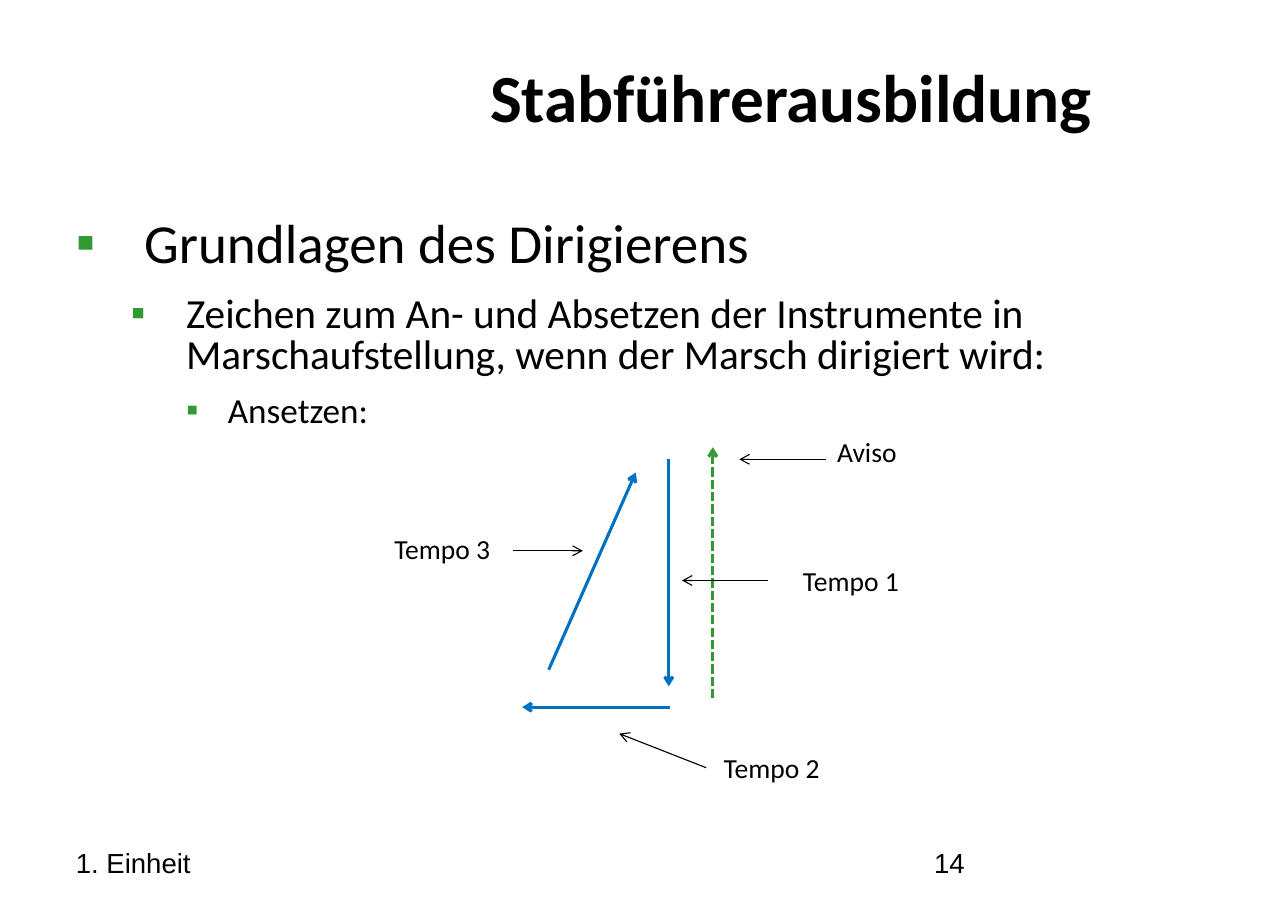
from lxml import etree
from pptx import Presentation
from pptx.dml.color import RGBColor
from pptx.enum.dml import MSO_LINE
from pptx.enum.shapes import MSO_CONNECTOR
from pptx.enum.text import MSO_ANCHOR, PP_ALIGN
from pptx.oxml.ns import qn
from pptx.util import Pt

PX = 9144
TOP = MSO_ANCHOR.TOP
LEFT = PP_ALIGN.LEFT
CENTER = PP_ALIGN.CENTER
LINE = MSO_CONNECTOR.STRAIGHT
DASH = MSO_LINE.SQUARE_DOT
BLACK = "000000"
GREEN = "339933"
BLUE = "0070C0"

POINTS = [
    ("Grundlagen des Dirigierens", 36, 62, 62, 14.2),
    ("Zeichen zum An- und Absetzen der Instrumente in "
     "Marschaufstellung, wenn der Marsch dirigiert wird:", 27, 100, 50, 11.4),
    ("Ansetzen:", 23, 138, 38, 8.5),
]
BEATS = [
    ((474, 642), (608, 642)),
    ((577, 429), (498, 608)),
    ((607, 623), (607, 417)),
]
HINTS = [
    ((671, 417), (750, 417)),
    ((529, 500), (466, 500)),
    ((619, 527), (697, 527)),
    ((562, 666), (641, 697)),
]
LABELS = [
    ("Aviso", 750, 390, 94),
    ("Tempo 1", 719, 507, 126),
    ("Tempo 2", 647, 677, 118),
    ("Tempo 3", 348, 478, 118),
]


def color(code):
    return RGBColor.from_string(code)


def add_box(slide, left, top, width, height):
    box = slide.shapes.add_textbox(left * PX, top * PX, width * PX, height * PX)
    frame = box.text_frame
    frame.word_wrap = True
    frame.vertical_anchor = TOP
    return frame


def add_run(para, text, size, font="Calibri", bold=False):
    run = para.add_run()
    run.text = text
    run.font.size = Pt(size)
    run.font.name = font
    run.font.bold = bold
    run.font.color.rgb = color(BLACK)


def add_text(slide, text, size, area, font="Calibri", space=1.0):
    para = add_box(slide, *area).paragraphs[0]
    para.alignment = LEFT
    para.line_spacing = space
    add_run(para, text, size, font)


def add_title(slide, text):
    frame = add_box(slide, 325, 43, 787, 142)
    frame.margin_top = 20 * PX
    para = frame.paragraphs[0]
    para.alignment = CENTER
    para.line_spacing = 0.83
    para.space_after = Pt(14.2)
    add_run(para, text, 44, bold=True)


def set_bullet(para, margin, hang):
    props = para._p.get_or_add_pPr()
    props.set("marL", str(margin * PX))
    props.set("indent", str(-hang * PX))
    tint = etree.SubElement(props, qn("a:buClr"))
    etree.SubElement(tint, qn("a:srgbClr"), val=GREEN)
    etree.SubElement(props, qn("a:buFont"), typeface="Arial")
    etree.SubElement(props, qn("a:buChar"), char="▪")


def add_list(slide, points):
    frame = add_box(slide, 59, 194, 1051, 545)
    for level, (text, size, margin, hang, after) in enumerate(points):
        para = frame.add_paragraph() if level else frame.paragraphs[0]
        set_bullet(para, margin, hang)
        para.level = level
        para.line_spacing = 0.83
        para.space_after = Pt(after)
        add_run(para, text, size)


def add_arrow(slide, tip, start, tone, width, dash=None):
    ends = [value * PX for value in (*start, *tip)]
    arrow = slide.shapes.add_connector(LINE, *ends)
    arrow.line.color.rgb = color(tone)
    arrow.line.width = Pt(width)
    if dash:
        arrow.line.dash_style = dash
    etree.SubElement(arrow.line._get_or_add_ln(), qn("a:tailEnd"), type="arrow")
    etree.SubElement(arrow._element.spPr, qn("a:effectLst"))


def main():
    deck = Presentation()
    deck.slide_width = 1169 * PX
    deck.slide_height = 827 * PX
    slide = deck.slides.add_slide(deck.slide_layouts[6])

    add_title(slide, "Stabführerausbildung")
    add_list(slide, POINTS)
    for text, left in (("1. Einheit", 59), ("14", 838)):
        add_text(slide, text, 18, (left, 766, 272, 43), "Arial", 0.93)

    add_arrow(slide, (647, 406), (647, 634), GREEN, 2, DASH)
    for tip, start in BEATS:
        add_arrow(slide, tip, start, BLUE, 2)
    for tip, start in HINTS:
        add_arrow(slide, tip, start, BLACK, 0.75)
    for text, left, top, width in LABELS:
        add_text(slide, text, 18, (left, top, width, 40))

    deck.save("out.pptx")


if __name__ == "__main__":
    main()
